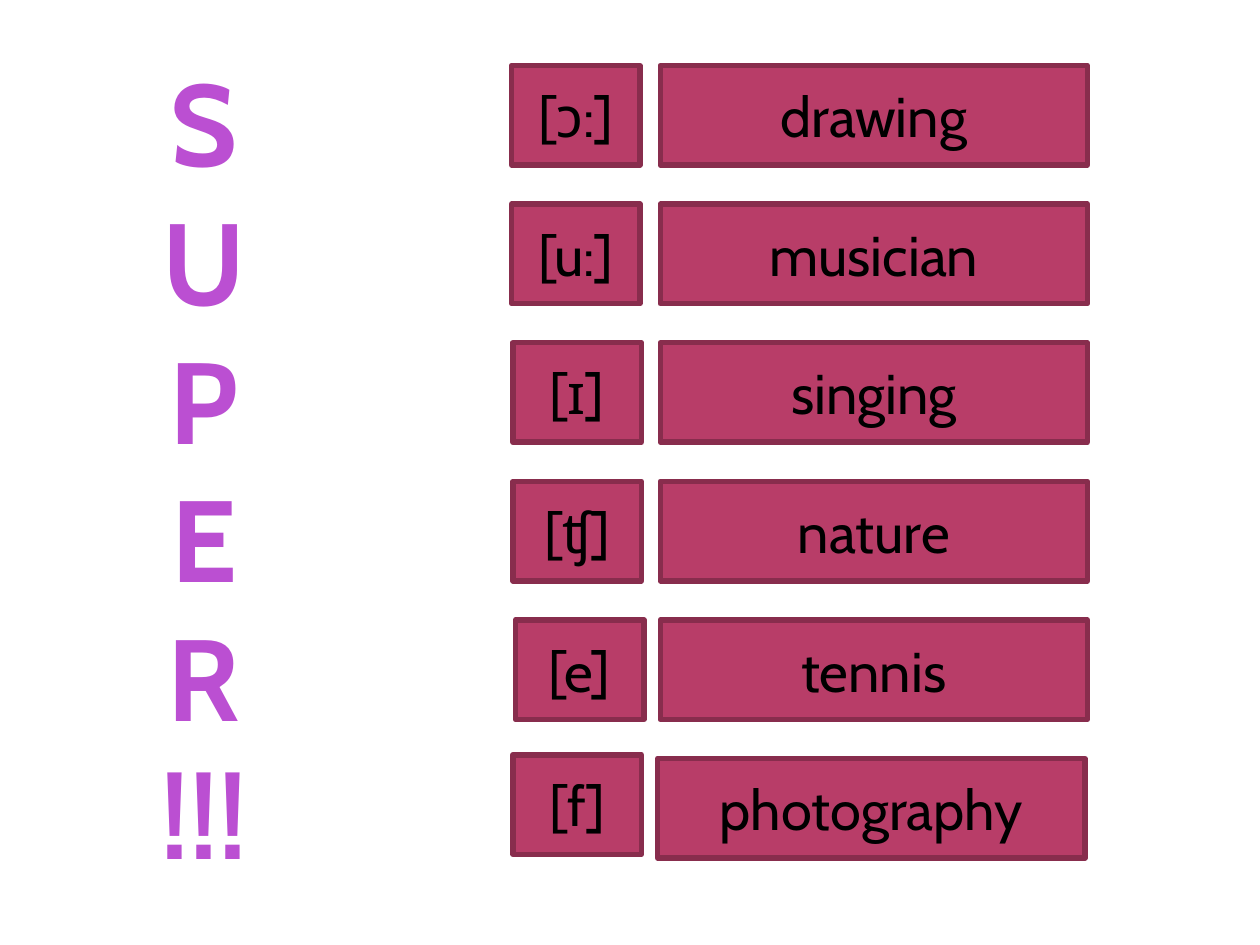
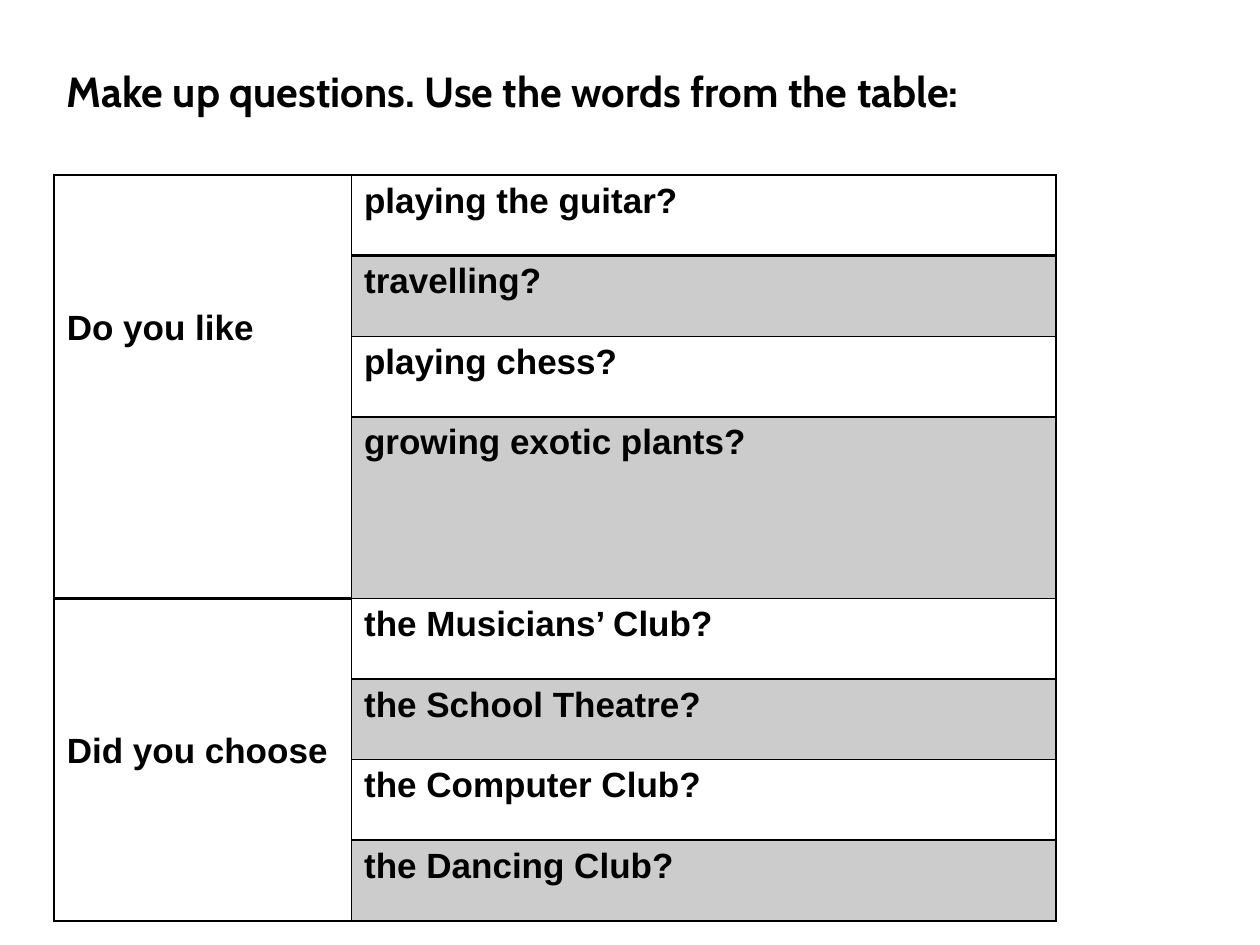
import pptx
import pptx.util
import pptx.dml.color
import pptx.enum.shapes
import pptx.enum.text
import pptx.oxml
import pptx.oxml.ns

Inches = pptx.util.Inches
Pt = pptx.util.Pt
RGBColor = pptx.dml.color.RGBColor
ALIGN = pptx.enum.text.PP_ALIGN
ANCHOR = pptx.enum.text.MSO_ANCHOR

BLACK = RGBColor(0, 0, 0)
WHITE = RGBColor(255, 255, 255)
GREY = RGBColor(0xCC, 0xCC, 0xCC)
VIOLET = RGBColor(0xBB, 0x4F, 0xD2)
ROSE = RGBColor(0xB8, 0x3D, 0x68)
WINE = RGBColor(0x88, 0x2D, 0x4D)
HEAD = "Cabin"
BODY = "Arial"

# sound, its left edge, its rise above the row, word, left edge of the word
PAIRS = [
    ("[ɔ:]", 4.06, 0, "drawing", 5.24),
    ("[u:]", 4.06, 0, "musician", 5.24),
    ("[ɪ]", 4.07, 0, "singing", 5.24),
    ("[ʧ]", 4.07, 0, "nature", 5.24),
    ("[e]", 4.09, 0, "tennis", 5.24),
    ("[f]", 4.07, 0.03, "photography", 5.22),
]
GROUPS = [
    ("Do you like", ["playing the guitar?", "travelling?", "playing chess?",
                     "growing exotic plants?"]),
    ("Did you choose", ["the Musicians’ Club?", "the School Theatre?",
                        "the Computer Club?", "the Dancing Club?"]),
]


def style(para, size, name=HEAD, color=BLACK, bold=False, align=ALIGN.CENTER):
    para.alignment = align
    font = para.font
    font.size, font.name, font.bold = Pt(size), name, bold
    font.color.rgb = color


def add_cheer(slide, left, top, width, height):
    """Stack the letters of the praise word down the slide."""
    box = slide.shapes.add_textbox(Inches(left), Inches(top), Inches(width), Inches(height))
    frame = box.text_frame
    frame.word_wrap = False
    frame.text = "\n".join([*"SUPER", "!!!"])
    for para in frame.paragraphs:
        style(para, 66, color=VIOLET, bold=True)


def add_card(slide, text, left, top, width, height=0.79):
    card = slide.shapes.add_shape(
        pptx.enum.shapes.MSO_SHAPE.RECTANGLE,
        Inches(left), Inches(top), Inches(width), Inches(height))
    card.shadow.inherit = False
    card.fill.solid()
    card.fill.fore_color.rgb = ROSE
    card.line.color.rgb = WINE
    card.line.width = Pt(3.15)
    frame = card.text_frame
    frame.text = text
    frame.vertical_anchor = ANCHOR.MIDDLE
    style(frame.paragraphs[0], 32)


def add_pairs(slide, top, step):
    for row, (sound, left, rise, word, edge) in enumerate(PAIRS):
        level = top + row * step
        add_card(slide, sound, left, level - rise, 1.02)
        add_card(slide, word, edge, level, 3.39)


def add_title(slide, text, left, top, width, height):
    title = slide.shapes.title
    title.left, title.top = Inches(left), Inches(top)
    title.width, title.height = Inches(width), Inches(height)
    frame = title.text_frame
    frame.text = text
    frame.vertical_anchor = ANCHOR.TOP
    style(frame.paragraphs[0], 24, bold=True, align=ALIGN.LEFT)


def set_cell(cell, fill, low=1):
    """Draw the borders, with a bottom line of the given points, and fill."""
    props = cell._tc.get_or_add_tcPr()
    for side, width in (("L", 1), ("R", 1), ("T", 1), ("B", low)):
        props.append(pptx.oxml.parse_xml(
            f'<a:ln{side} {pptx.oxml.ns.nsdecls("a")} w="{Pt(width)}">'
            f'<a:solidFill><a:srgbClr val="{BLACK}"/></a:solidFill></a:ln{side}>'))
    cell.fill.solid()
    cell.fill.fore_color.rgb = fill


def write_cell(cell, text):
    cell.text = text
    style(cell.text_frame.paragraphs[0], 20, BODY, bold=True, align=ALIGN.LEFT)


def add_grid(slide, left, top, widths, height):
    count = sum(len(ends) for _, ends in GROUPS)
    table = slide.shapes.add_table(
        count, 2, Inches(left), Inches(top),
        Inches(sum(widths)), Inches(count * height)).table
    table.first_row = table.horz_banding = False
    for column, width in zip(table.columns, widths):
        column.width = Inches(width)
    for row in table.rows:
        row.height = Inches(height)
    table.rows[3].height = Inches(1.44)

    first = 0
    for start, ends in GROUPS:
        last = first + len(ends) - 1
        for row, end in enumerate(ends, first):
            low = 2 if first == 0 and row in (first, last) else 1
            set_cell(table.cell(row, 0), WHITE, low)
            set_cell(table.cell(row, 1), GREY if row % 2 else WHITE,
                     2 if row == 0 else 1)
            write_cell(table.cell(row, 1), end)
        lead = table.cell(first, 0)
        lead.merge(table.cell(last, 0))
        lead.margin_top = Inches(1.06)
        write_cell(lead, start)
        first = last + 1


def main():
    deck = pptx.Presentation()
    deck.slide_width, deck.slide_height = Inches(10), Inches(7.5)

    sounds = deck.slides.add_slide(deck.slide_layouts[6])
    add_cheer(sounds, 1, 0.36, 1.24, 6.77)
    add_pairs(sounds, 0.52, 1.1)

    quiz = deck.slides.add_slide(deck.slide_layouts[5])
    add_title(quiz, "Make up questions. Use the words from the table:",
              0.43, 0.47, 8.03, 0.5)
    add_grid(quiz, 0.43, 1.39, (2.36, 5.59), 0.64)
    deck.save("out.pptx")


if __name__ == "__main__":
    main()
